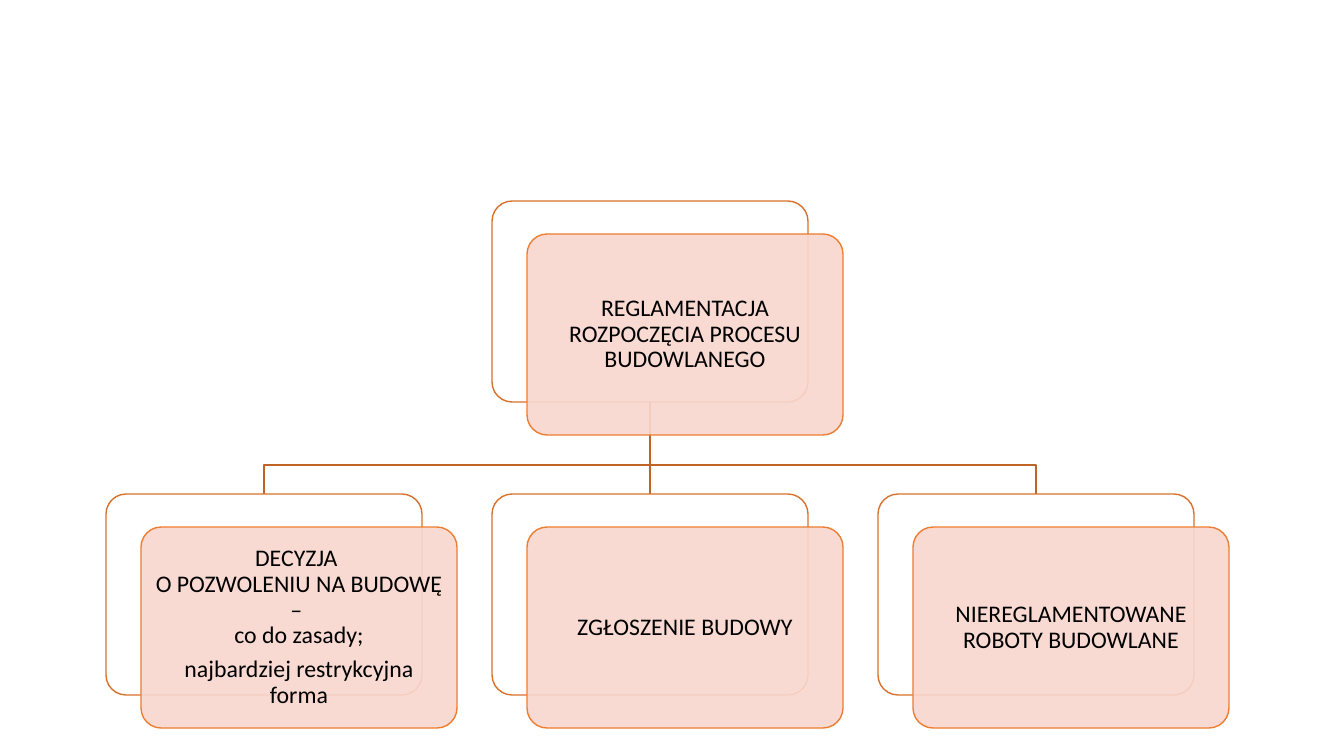
"""Build a slide with a hierarchy of ways to start construction works."""
from lxml import etree
from pptx import Presentation
from pptx.dml.color import RGBColor
from pptx.enum.shapes import MSO_CONNECTOR, MSO_SHAPE
from pptx.enum.text import MSO_ANCHOR, PP_ALIGN
from pptx.oxml.ns import qn
from pptx.util import Pt

PX = 914400 / 100.8
ROUNDED = MSO_SHAPE.ROUNDED_RECTANGLE
STRAIGHT = MSO_CONNECTOR.STRAIGHT
MIDDLE = MSO_ANCHOR.MIDDLE
CENTER = PP_ALIGN.CENTER

COLORS = {"back": "FFFFFF", "back_line": "D7712C", "card": "F8D7CE",
          "card_line": "ED7D31", "link": "BE6427", "text": "000000"}
CARD_W, CARD_H = 316, 201
SHIFT_X, SHIFT_Y = 35, 33
LEFT, PITCH = 106, 386
ROOT_TOP, CHILD_TOP, BAR_Y = 201, 494, 465
ROOT_LEFT = LEFT + PITCH

ROOT = ["REGLAMENTACJA ROZPOCZĘCIA PROCESU BUDOWLANEGO"]
CHILDREN = [
    ["DECYZJA \vO POZWOLENIU NA BUDOWĘ – \vco do zasady;",
     "najbardziej restrykcyjna forma"],
    ["ZGŁOSZENIE BUDOWY"],
    ["NIEREGLAMENTOWANE ROBOTY BUDOWLANE"],
]


def px(value):
    return round(value * PX)


def add_text(sp, paragraphs, size=17, color="text", font="Calibri", inset=7):
    tf = sp.text_frame
    tf.word_wrap = True
    tf.vertical_anchor = MIDDLE
    tf.margin_left = tf.margin_right = px(inset)
    tf.margin_top = tf.margin_bottom = px(inset)
    for i, text in enumerate(paragraphs):
        p = tf.paragraphs[0] if i == 0 else tf.add_paragraph()
        p.text = text
        p.alignment = CENTER
        p.line_spacing = 0.9
        p.space_after = Pt(6)
        for r in p.runs:
            r.font.size = Pt(size)
            r.font.name = font
            r.font.color.rgb = RGBColor.from_string(COLORS[color])


prs = Presentation()
prs.slide_width, prs.slide_height = px(1344), px(756)
s = prs.slides.add_slide(prs.slide_layouts[6])

root_x = ROOT_LEFT + CARD_W / 2
root_bottom = ROOT_TOP + CARD_H
for col in (2, 1, 0):
    x = LEFT + col * PITCH + CARD_W / 2
    if x == root_x:
        sp = s.shapes.add_connector(STRAIGHT, px(x), px(root_bottom), px(x), px(CHILD_TOP))
    else:
        outline = s.shapes.build_freeform(root_x, root_bottom, scale=PX)
        outline.add_line_segments([(root_x, BAR_Y), (x, BAR_Y), (x, CHILD_TOP)], close=False)
        sp = outline.convert_to_shape()
        sp.fill.background()
    sp.line.color.rgb = RGBColor.from_string(COLORS["link"])
    sp.line.width = Pt(1)
    etree.SubElement(sp._element.spPr, qn("a:effectLst"))

cards = [(ROOT_LEFT, ROOT_TOP, ROOT)]
cards += [(LEFT + i * PITCH, CHILD_TOP, text) for i, text in enumerate(CHILDREN)]
for left, top, paragraphs in cards:
    for name, dx, dy in (("back", 0, 0), ("card", SHIFT_X, SHIFT_Y)):
        sp = s.shapes.add_shape(ROUNDED, px(left + dx), px(top + dy), px(CARD_W), px(CARD_H))
        sp.adjustments[0] = 0.1
        sp.shadow.inherit = False
        sp.fill.solid()
        sp.fill.fore_color.rgb = RGBColor.from_string(COLORS[name])
        sp.line.color.rgb = RGBColor.from_string(COLORS[name + "_line"])
        sp.line.width = Pt(1)
    color = sp._element.spPr.find(qn("a:solidFill"))[0]
    etree.SubElement(color, qn("a:alpha"), val="90000")
    add_text(sp, paragraphs)

prs.save("out.pptx")
